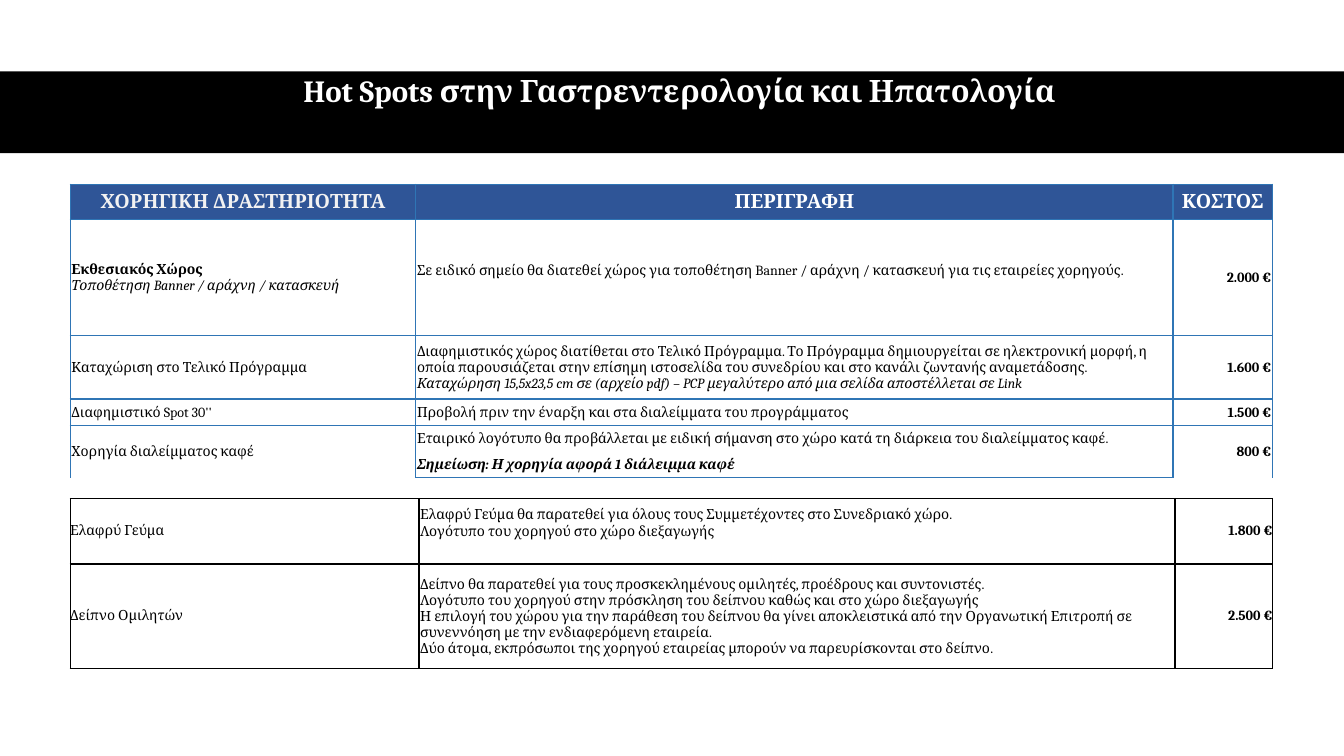
from lxml import etree
from pptx import Presentation
from pptx import util as u
from pptx.dml import color
from pptx.enum import shapes, text
from pptx.oxml import ns

FONT = "Cambria"
BLACK, WHITE, BLUE, HEADER = "000000", "FFFFFF", "2F75B5", "2F5597"
LEFT, RIGHT, CENTER = text.PP_ALIGN.LEFT, text.PP_ALIGN.RIGHT, text.PP_ALIGN.CENTER

HEADINGS = ["ΧΟΡΗΓΙΚΗ ΔΡΑΣΤΗΡΙΟΤΗΤΑ", "ΠΕΡΙΓΡΑΦΗ", "ΚΟΣΤΟΣ"]

SPONSORSHIPS = [
    ([[("Εκθεσιακός Χώρος", "b"), ("Τοποθέτηση Banner / αράχνη / κατασκευή", "i")]],
     [[("Σε ειδικό σημείο θα διατεθεί χώρος για τοποθέτηση Banner / αράχνη / "
        "κατασκευή για τις εταιρείες χορηγούς.", "")]],
     "2.000 €"),
    ([], [], ""),
    ([], [], ""),
    ([[("Καταχώριση στο Τελικό Πρόγραμμα", "")]],
     [[("Διαφημιστικός χώρος διατίθεται στο Τελικό Πρόγραμμα. Το Πρόγραμμα "
        "δημιουργείται σε ηλεκτρονική μορφή, η οποία παρουσιάζεται στην επίσημη "
        "ιστοσελίδα του συνεδρίου και στο κανάλι ζωντανής αναμετάδοσης.", ""),
       ("Καταχώρηση 15,5x23,5 cm σε (αρχείο pdf) – PCP μεγαλύτερο από μια σελίδα "
        "αποστέλλεται σε Link", "i")]],
     "1.600 €"),
    ([[("Διαφημιστικό Spot 30''", "")]],
     [[("Προβολή πριν την έναρξη και στα διαλείμματα του προγράμματος", "")]],
     "1.500 €"),
    ([[("Χορηγία διαλείμματος καφέ", "")]],
     [[("Εταιρικό λογότυπο θα προβάλλεται με ειδική σήμανση στο χώρο κατά τη "
        "διάρκεια του διαλείμματος καφέ.", "")]],
     "800 €"),
    ([], [[("Σημείωση: Η χορηγία αφορά 1 διάλειμμα καφέ", "bi")]], ""),
]

MEALS = [
    ([[("Ελαφρύ Γεύμα", "")]],
     [[("Ελαφρύ Γεύμα θα παρατεθεί για όλους τους Συμμετέχοντες στο Συνεδριακό χώρο.", "")],
      [("Λογότυπο του χορηγού στο χώρο διεξαγωγής", "")]],
     "1.800 €"),
    ([[("Δείπνο Ομιλητών", "")]],
     [[("Δείπνο θα παρατεθεί για τους προσκεκλημένους ομιλητές, προέδρους και "
        "συντονιστές.", "")],
      [("Λογότυπο του χορηγού στην πρόσκληση του δείπνου καθώς και στο χώρο "
        "διεξαγωγής", "")],
      [("Η επιλογή του χώρου για την παράθεση του δείπνου θα γίνει αποκλειστικά από "
        "την Οργανωτική Επιτροπή σε συνεννόηση με την ενδιαφερόμενη εταιρεία.", ""),
       ("Δύο άτομα, εκπρόσωποι της χορηγού εταιρείας μπορούν να παρευρίσκονται στο "
        "δείπνο.", "")]],
     "2.500 €"),
]


def rgb(value):
    return color.RGBColor.from_string(value)


def style_paragraph(p, size, fill, align):
    p.alignment = align
    p.font.name = FONT
    p.font.size = u.Pt(size)
    p.font.color.rgb = rgb(fill)


def set_emphasis(font, style):
    font.bold = "b" in style
    font.italic = "i" in style


def write(tf, paragraphs, size=10, fill=BLACK, align=LEFT):
    for i, lines in enumerate(paragraphs or [[]]):
        p = tf.paragraphs[0] if i == 0 else tf.add_paragraph()
        style_paragraph(p, size, fill, align)
        styles = {style for _, style in lines}
        if len(styles) == 1:
            set_emphasis(p.font, lines[0][1])
        for j, (line, style) in enumerate(lines):
            if j:
                p.add_line_break()
            r = p.add_run()
            r.text = line
            if len(styles) > 1:
                set_emphasis(r.font, style)


def set_borders(cell, line, open_sides):
    tc_pr = cell._tc.get_or_add_tcPr()
    for side in "LRTB":
        ln = etree.SubElement(tc_pr, ns.qn(f"a:ln{side}"), w=str(u.Pt(1)))
        if side in open_sides:
            etree.SubElement(ln, ns.qn("a:noFill"))
        else:
            solid = etree.SubElement(ln, ns.qn("a:solidFill"))
            etree.SubElement(solid, ns.qn("a:srgbClr"), val=line)


def set_margins(cell, inset):
    cell.margin_left = cell.margin_right = cell.margin_top = u.Cm(inset)
    cell.margin_bottom = 0


def add_grid(s, top, widths, heights, line, inset, joined=()):
    frame = s.shapes.add_table(len(heights), len(widths), u.Cm(1.77), u.Cm(top),
                               u.Cm(sum(widths)), u.Cm(sum(heights)))
    table = frame.table
    table.first_row = table.horz_banding = False
    for column, width in zip(table.columns, widths):
        column.width = u.Cm(width)
    for i, height in enumerate(heights):
        table.rows[i].height = u.Cm(height)
        open_sides = "T" * (i in joined) + "B" * (i + 1 in joined)
        for j in range(len(widths)):
            cell = table.cell(i, j)
            cell.vertical_anchor = text.MSO_ANCHOR.MIDDLE
            set_margins(cell, 0.03 if j == 1 else inset)
            set_borders(cell, line, open_sides)
            cell.fill.background()
    return table


def fill_rows(table, rows, first=0):
    for i, (activity, description, cost) in enumerate(rows, first):
        write(table.cell(i, 0).text_frame, activity)
        write(table.cell(i, 1).text_frame, description)
        write(table.cell(i, 2).text_frame, [[(cost, "b")]] if cost else [], align=RIGHT)


def add_sponsorships(s):
    table = add_grid(s, 4.64, [8.71, 19.08, 2.51],
                     [0.89, 1.73, 0.74, 0.41, 1.6, 0.66, 0.66, 0.66],
                     BLUE, 0.03, joined=(2, 3, 7))
    for j, heading in enumerate(HEADINGS):
        cell = table.cell(0, j)
        cell.fill.solid()
        cell.fill.fore_color.rgb = rgb(HEADER)
        write(cell.text_frame, [[(heading, "b")]], 14, WHITE if j else "F2F2F2", CENTER)
    fill_rows(table, SPONSORSHIPS, first=1)
    table.cell(1, 1).margin_top = u.Cm(0.85)
    for j in (0, 2):
        table.cell(1, j).merge(table.cell(3, j))
        table.cell(6, j).merge(table.cell(7, j))


def add_meals(s):
    table = add_grid(s, 12.56, [8.79, 19.05, 2.46], [1.65, 2.64], BLACK, 0)
    fill_rows(table, MEALS)
    table.cell(0, 1).margin_bottom = u.Cm(0.42)


def add_title(s, title):
    band = s.shapes.add_shape(shapes.MSO_SHAPE.RECTANGLE, 0, u.Cm(1.8),
                              u.Cm(33.87), u.Cm(2.06))
    band.shadow.inherit = False
    band.fill.solid()
    band.fill.fore_color.rgb = rgb(BLACK)
    band.line.fill.background()
    box = s.shapes.add_textbox(u.Cm(1.55), u.Cm(1.78), u.Cm(31.14), u.Cm(2.06))
    tf = box.text_frame
    tf.word_wrap = True
    write(tf, [[(title, "b")]], 22, WHITE, CENTER)
    tf.paragraphs[0].line_spacing = 0.9


def main():
    prs = Presentation()
    prs.slide_width, prs.slide_height = u.Cm(33.87), u.Cm(19.05)
    s = prs.slides.add_slide(prs.slide_layouts[6])
    add_title(s, "Hot Spots στην Γαστρεντερολογία και Ηπατολογία")
    add_sponsorships(s)
    add_meals(s)
    prs.save("out.pptx")


if __name__ == "__main__":
    main()
